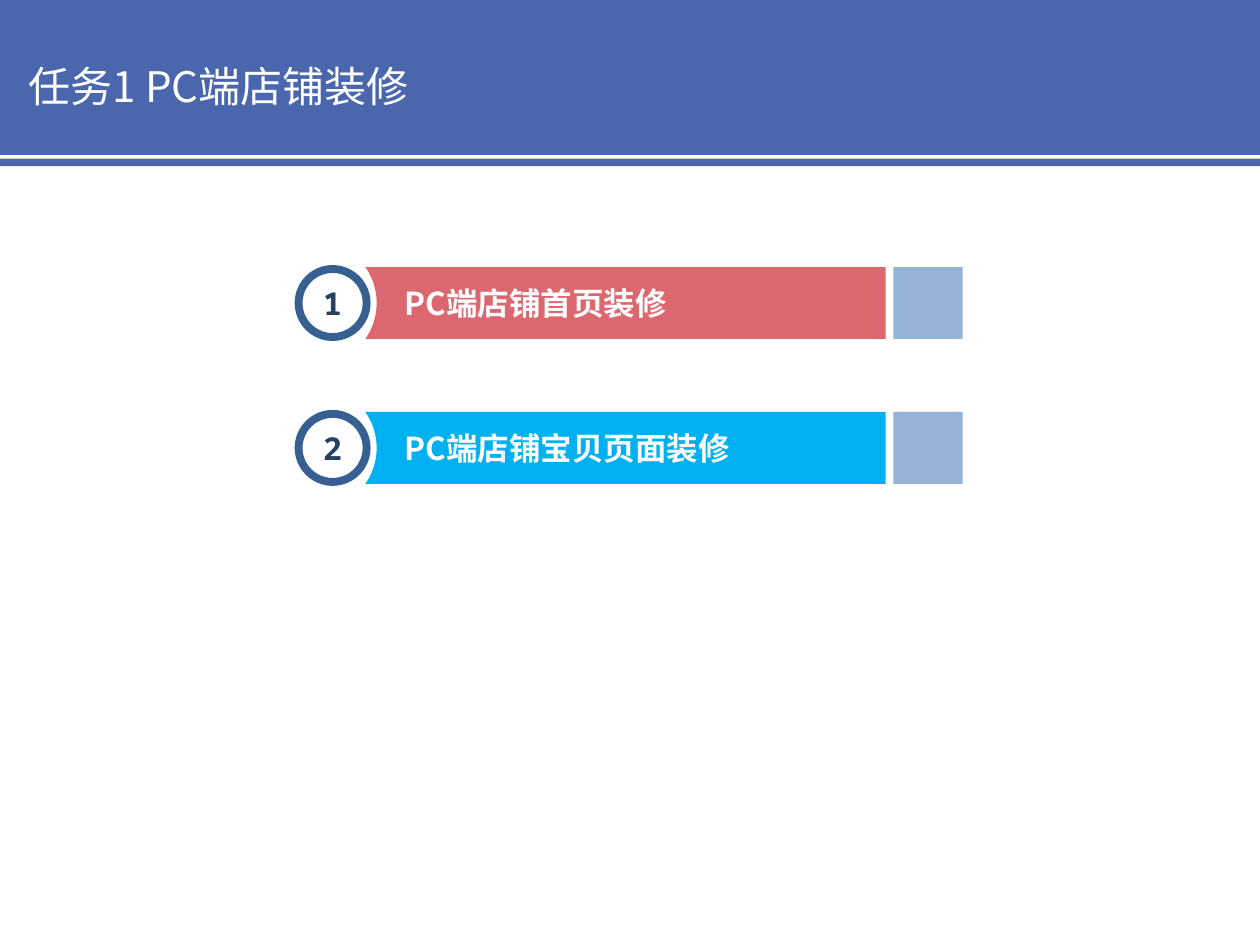
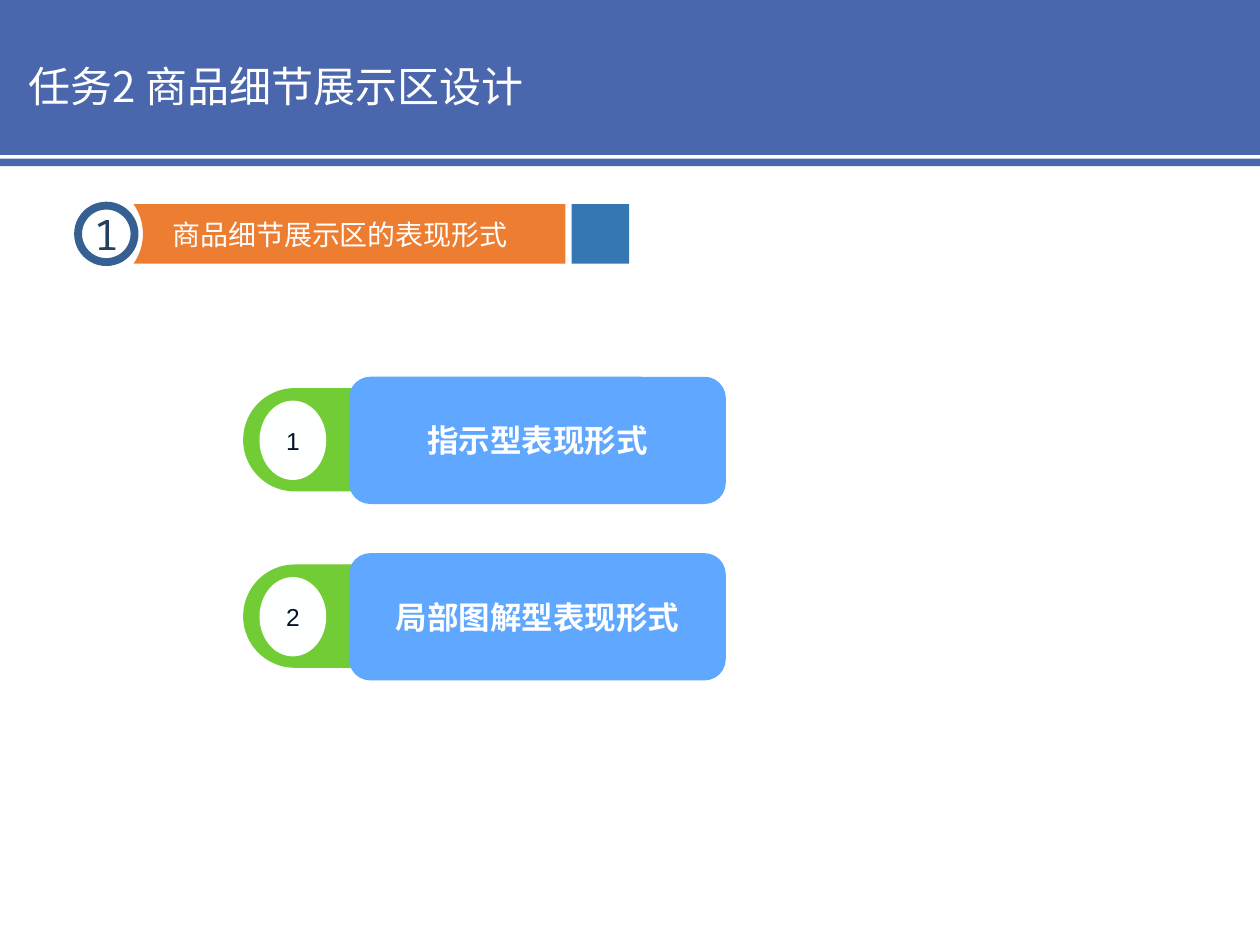
from dataclasses import dataclass
from math import asin, cos, sin

from lxml.etree import SubElement
from pptx import Presentation
from pptx.dml.color import RGBColor
from pptx.enum.shapes import MSO_SHAPE
from pptx.enum.text import MSO_ANCHOR, PP_ALIGN
from pptx.oxml.ns import qn
from pptx.shapes.base import BaseShape
from pptx.shapes.shapetree import GroupShapes
from pptx.slide import Slide
from pptx.util import Inches, Pt

NAVY = RGBColor(0x4A, 0x66, 0xAC)
WHITE = RGBColor(0xFF, 0xFF, 0xFF)
RING = RGBColor(0x37, 0x60, 0x92)
DIGIT = RGBColor(0x25, 0x40, 0x61)
RED = RGBColor(0xDC, 0x67, 0x6F)
CYAN = RGBColor(0x00, 0xB0, 0xF0)
MIST = RGBColor(0x95, 0xB3, 0xD7)
ORANGE = RGBColor(0xED, 0x7D, 0x31)
STEEL = RGBColor(0x34, 0x77, 0xB2)
GREEN = RGBColor(0x71, 0xCC, 0x35)
PEARL = RGBColor(0xFE, 0xFF, 0xFF)
SKY = RGBColor(0x60, 0xA7, 0xFF)
INK = RGBColor(0x03, 0x12, 0x27)

SANS = "Noto Sans CJK SC"
MONO = "Noto Sans Mono"
LATIN = "Arial"

ARC_STEPS = 24


@dataclass
class Style:
    font: str
    size: int
    color: RGBColor
    bold: bool = False


@dataclass
class Banner:
    left: float
    top: float
    number: str
    label: str
    fill: RGBColor
    tail: RGBColor
    digit: Style
    text: Style
    scale: float = 1.0


@dataclass
class Card:
    top: float
    number: str
    label: str


TITLE = Style(SANS, 24, WHITE)
CARD_DIGIT = Style(LATIN, 14, INK)
CARD_TEXT = Style(LATIN, 18, WHITE, True)


def write(shape: BaseShape, text: str, style: Style, align: PP_ALIGN,
          insets: tuple[float, ...] = (0, 0, 0, 0)) -> None:
    """Set one middle-anchored line; insets run left, top, right, bottom."""
    frame = shape.text_frame
    frame.word_wrap = True
    frame.vertical_anchor = MSO_ANCHOR.MIDDLE
    (frame.margin_left, frame.margin_top,
     frame.margin_right, frame.margin_bottom) = map(Inches, insets)
    line = frame.paragraphs[0]
    line.alignment = align
    run = line.add_run()
    run.text = text
    font = run.font
    font.name, font.size, font.bold = style.font, Pt(style.size), style.bold
    font.color.rgb = style.color
    SubElement(run._r.get_or_add_rPr(), qn("a:ea"), typeface=SANS)


def paint(shape: BaseShape, fill: RGBColor) -> BaseShape:
    shape.shadow.inherit = False
    shape.fill.solid()
    shape.fill.fore_color.rgb = fill
    shape.line.fill.background()
    return shape


def block(shapes: GroupShapes, kind: MSO_SHAPE, box: tuple[float, ...],
          fill: RGBColor) -> BaseShape:
    return paint(shapes.add_shape(kind, *map(Inches, box)), fill)


def draw_frame(slide: Slide, title: str) -> None:
    for top, height in ((0, 1.23), (1.26, 0.06)):
        block(slide.shapes, MSO_SHAPE.RECTANGLE, (0, top, 10, height), NAVY)
    box = slide.shapes.add_textbox(*map(Inches, (0.13, 0.24, 5.27, 0.88)))
    write(box, title, TITLE, PP_ALIGN.LEFT, (0.1, 0.05, 0.1, 0.05))


def draw_bar(shapes: GroupShapes, left: float, top: float, width: float,
             height: float, bulge: float) -> BaseShape:
    """Build a bar whose left end is cut by an arc bulging to the right."""
    half = height / 2
    radius = (half ** 2 + bulge ** 2) / (2 * bulge)
    center = left + bulge - radius
    sweep = asin(half / radius)
    angles = [sweep * (1 - 2 * i / ARC_STEPS) for i in range(ARC_STEPS + 1)]
    arc = [(center + radius * cos(a), top + half + radius * sin(a))
           for a in angles]
    right = left + width
    points = [(right, top), (right, top + height), *arc]
    start, *rest = [(Inches(x), Inches(y)) for x, y in points]
    builder = shapes.build_freeform(*start)
    builder.add_line_segments(rest, close=True)
    return builder.convert_to_shape()


def draw_banner(slide: Slide, item: Banner) -> None:
    shapes = slide.shapes.add_group_shape().shapes
    left, top, k = item.left, item.top, item.scale
    height, ring = 0.57 * k, 0.54 * k
    block(shapes, MSO_SHAPE.RECTANGLE,
          (left + 4.72 * k, top, 0.55 * k, height), item.tail)
    bar = paint(draw_bar(shapes, left + 0.53 * k, top, 4.13 * k, height,
                         0.09 * k), item.fill)
    write(bar, item.label, item.text, PP_ALIGN.JUSTIFY,
          (0.31, 0.05, 0.1, 0.05))
    badge = block(shapes, MSO_SHAPE.OVAL,
                  (left, top + (height - ring) / 2, ring, ring), WHITE)
    badge.fill.background()
    badge.line.color.rgb = RING
    badge.line.width = Pt(4.5)
    write(badge, item.number, item.digit, PP_ALIGN.CENTER)


def draw_card(slide: Slide, card: Card) -> None:
    shapes = slide.shapes.add_group_shape().shapes
    top = card.top
    pill = block(shapes, MSO_SHAPE.ROUNDED_RECTANGLE,
                 (1.93, top + 0.09, 2.21, 0.82), GREEN)
    pill.adjustments[0] = 0.5
    badge = block(shapes, MSO_SHAPE.OVAL,
                  (2.06, top + 0.19, 0.53, 0.63), PEARL)
    write(badge, card.number, CARD_DIGIT, PP_ALIGN.CENTER)
    panel = block(shapes, MSO_SHAPE.ROUNDED_RECTANGLE,
                  (2.77, top, 2.99, 1.01), SKY)
    write(panel, card.label, CARD_TEXT, PP_ALIGN.CENTER)


def main() -> None:
    deck = Presentation()
    deck.slide_width, deck.slide_height = Inches(10), Inches(7.5)
    blank = deck.slide_layouts[6]

    agenda = deck.slides.add_slide(blank)
    draw_frame(agenda, "任务1 PC端店铺装修")
    digit = Style(MONO, 18, DIGIT, True)
    text = Style(SANS, 18, WHITE, True)
    topics = (("PC端店铺首页装修", RED), ("PC端店铺宝贝页面装修", CYAN))
    for i, (label, fill) in enumerate(topics):
        draw_banner(agenda, Banner(2.37, 2.12 + 1.15 * i, str(i + 1), label,
                                   fill, MIST, digit, text))

    forms = deck.slides.add_slide(blank)
    draw_frame(forms, "任务2 商品细节展示区设计")
    draw_banner(forms, Banner(0.62, 1.62, "1", "商品细节展示区的表现形式",
                              ORANGE, STEEL, Style(MONO, 24, DIGIT),
                              Style(SANS, 16, WHITE), 0.83))
    for i, label in enumerate(("指示型表现形式", "局部图解型表现形式")):
        draw_card(forms, Card(2.99 + 1.4 * i, str(i + 1), label))

    deck.save("out.pptx")


if __name__ == "__main__":
    main()
